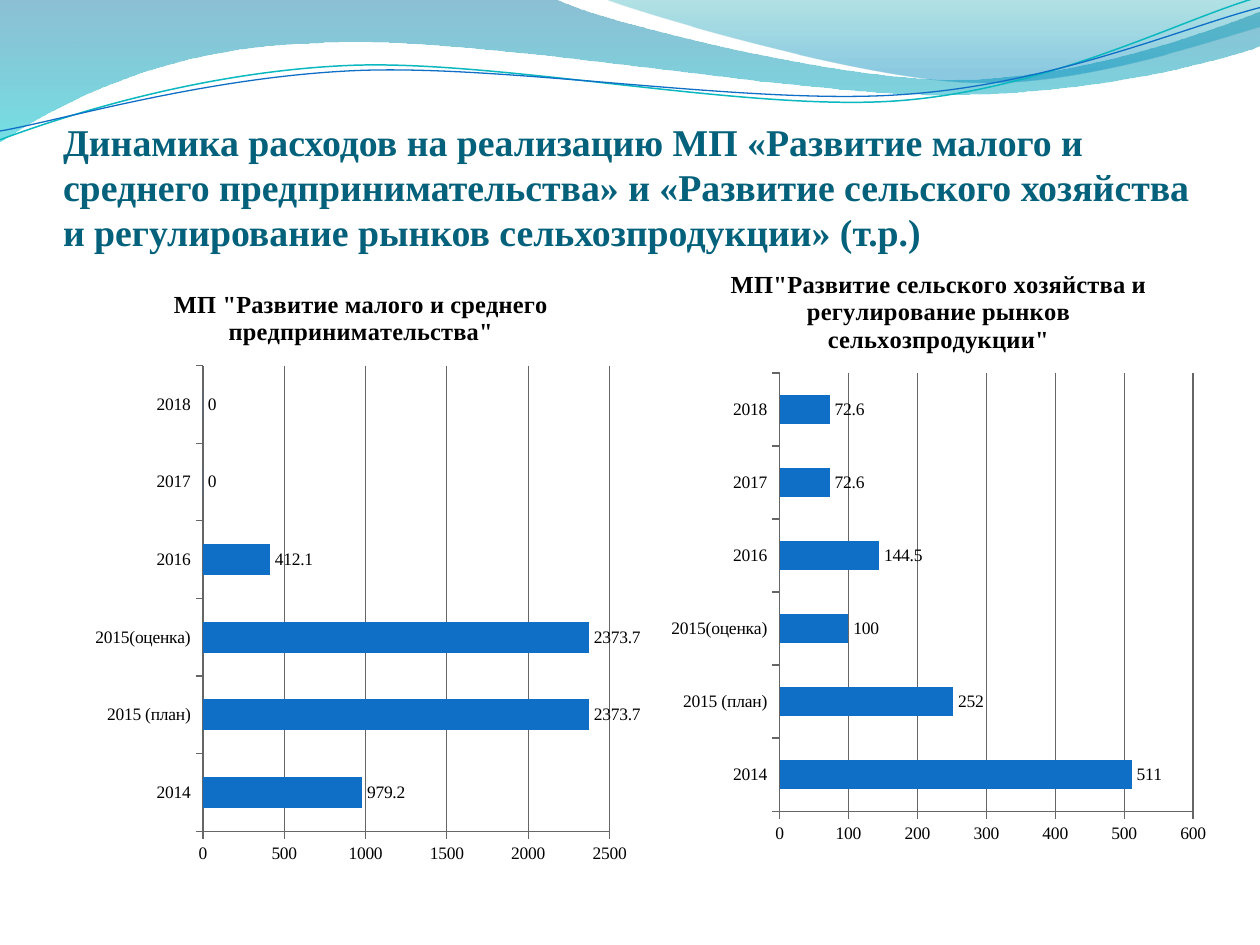
from math import cos, radians, sin

from lxml import etree
from pptx import Presentation
from pptx.chart.data import CategoryChartData
from pptx.dml.color import RGBColor
from pptx.enum.chart import XL_CHART_TYPE, XL_LABEL_POSITION, XL_TICK_MARK
from pptx.enum.text import MSO_ANCHOR, MSO_AUTO_SIZE, PP_ALIGN
from pptx.oxml.ns import qn
from pptx.util import Inches, Pt

FONT = "Times New Roman"
TITLE_COLOR = RGBColor(0x04, 0x61, 0x7B)
BLUE = RGBColor(0x0F, 0x6F, 0xC6)
TURQUOISE = RGBColor(0x0A, 0xB8, 0xBF)
GRID_GRAY = RGBColor(0x66, 0x66, 0x66)
BLACK = RGBColor(0, 0, 0)
LINE_TILT = -2.7

TITLE = ("Динамика расходов на реализацию МП «Развитие малого и среднего "
         "предпринимательства» и «Развитие сельского хозяйства и "
         "регулирование рынков сельхозпродукции» (т.р.)")
YEARS = ("2014", "2015 (план)", "2015(оценка)", "2016", "2017", "2018")

# A wave has a box and segments: one point is a corner, three a Bezier curve.
# Fill stops are (position, colour, opacity in percent).
FILLED_WAVES = (
    ((-0.01, -0.01, 10.02, 1.14),
     [[(0, 0)], [(4.4, -0.01)],
      [(4.76, 0.17), (6.64, 0.63), (7.58, 0.63)],
      [(8.53, 0.63), (9.58, 0.26), (10, 0.09)], [(10.01, 0.36)],
      [(9.83, 0.44), (8.7, 0.76), (7.46, 0.75)],
      [(6.22, 0.75), (3.82, 0.28), (2.57, 0.34)],
      [(1.29, 0.36), (0.46, 0.83), (-0.01, 1.13)], [(0, 0)]],
     ((0, RGBColor(0x00, 0x74, 0xA1), 45), (1, RGBColor(0x00, 0xC6, 0xCF), 55))),
    ((4.79, -0.01, 5.21, 0.7),
     [[(4.79, -0.01)],
      [(5.09, 0.11), (6.82, 0.62), (7.69, 0.65)],
      [(8.56, 0.69), (9.61, 0.32), (10, 0.21)], [(10, 0)], [(4.79, -0.01)]],
     ((0, RGBColor(0x00, 0xA1, 0xA9), 30), (0.8, RGBColor(0x00, 0x8B, 0xBF), 45))),
)
LINE_WAVES = (
    ((-0.02, 0.22, 10.02, 0.71),
     [[(0, 1.11)],
      [(0.48, 0.93), (1.58, 0.57), (2.77, 0.52)],
      [(3.95, 0.47), (5.93, 0.89), (7.13, 0.8)],
      [(8.33, 0.71), (9.38, 0.15), (9.98, -0.02)]], TURQUOISE, 0.85),
    ((-0.02, 0.3, 10.03, 0.58),
     [[(0, 1.04)],
      [(0.47, 0.96), (1.64, 0.61), (2.83, 0.56)],
      [(4.03, 0.51), (5.97, 0.84), (7.17, 0.75)],
      [(8.36, 0.67), (9.41, 0.21), (10, 0.06)]], BLUE, 0.75),
)


def add_wave(slide, box, segments, closed, tilt=0):
    """Draw the segments in a box turned by tilt degrees about its centre."""
    left, top, width, height = box
    cosine, sine = cos(radians(tilt)), sin(radians(tilt))

    def to_box(point):
        x, y = point[0] - left - width / 2, point[1] - top - height / 2
        return (Inches(x * cosine + y * sine + width / 2),
                Inches(y * cosine - x * sine + height / 2))

    corners = [to_box(segment[-1]) for segment in segments]
    builder = slide.shapes.build_freeform(*corners[0])
    builder.add_line_segments(corners[1:], close=closed)
    shape = builder.convert_to_shape()
    shape.left, shape.top, shape.width, shape.height = map(Inches, box)
    shape.rotation = tilt
    shape.shadow.inherit = False

    outline = next(shape.element.iter(qn("a:path")))
    outline.set("w", str(Inches(width)))
    outline.set("h", str(Inches(height)))
    for command, segment in zip(list(outline), segments):
        if len(segment) == 3:
            command_name = "a:cubicBezTo"
        else:
            command_name = "a:lnTo" if segment is not segments[0] else "a:moveTo"
        replacement = etree.Element(qn(command_name))
        for x, y in map(to_box, segment):
            etree.SubElement(replacement, qn("a:pt"), x=str(x), y=str(y))
        outline.replace(command, replacement)
    return shape


def add_wave_header(slide):
    for box, segments, stops in FILLED_WAVES:
        shape = add_wave(slide, box, segments, closed=True)
        shape.line.fill.background()
        shape.fill.gradient()
        shape.fill.gradient_angle = 270
        for stop, (position, color, _) in zip(shape.fill.gradient_stops, stops):
            stop.position = position
            stop.color.rgb = color
        color_elements = list(shape.element.spPr.iter(qn("a:srgbClr")))
        for element, (_, _, opacity) in zip(color_elements, stops):
            etree.SubElement(element, qn("a:alpha"), val=str(opacity * 1000))
    for box, segments, color, line_width in LINE_WAVES:
        shape = add_wave(slide, box, segments, closed=False, tilt=LINE_TILT)
        shape.fill.background()
        shape.line.color.rgb = color
        shape.line.width = Pt(line_width)


def style_font(font, size, color, bold=False):
    font.name = FONT
    font.size = Pt(size)
    font.bold = bold
    font.color.rgb = color


def set_title(slide, left, top, width, height):
    title = slide.shapes.title
    title.left, title.top, title.width, title.height = left, top, width, height
    frame = title.text_frame
    frame.word_wrap = True
    frame.auto_size = MSO_AUTO_SIZE.NONE
    frame.vertical_anchor = MSO_ANCHOR.BOTTOM
    frame.margin_left = frame.margin_right = frame.margin_bottom = 0
    frame.margin_top = Inches(0.05)
    paragraph = frame.paragraphs[0]
    paragraph.alignment = PP_ALIGN.LEFT
    run = paragraph.add_run()
    run.text = TITLE
    style_font(run.font, 21.6, TITLE_COLOR, bold=True)


def add_expense_chart(slide, name, values, left, top, width, height):
    data = CategoryChartData()
    data.categories = YEARS
    data.add_series(name, values)
    chart = slide.shapes.add_chart(
        XL_CHART_TYPE.BAR_CLUSTERED, left, top, width, height, data).chart
    style_font(chart.font, 10, BLACK)
    chart.has_legend = False
    chart.has_title = True
    run = chart.chart_title.text_frame.paragraphs[0].add_run()
    run.text = name
    style_font(run.font, 14, BLACK, bold=True)
    chart.chart_title.include_in_layout = False

    for axis in (chart.category_axis, chart.value_axis):
        axis.major_tick_mark = XL_TICK_MARK.OUTSIDE
        axis.minor_tick_mark = XL_TICK_MARK.NONE
        axis.format.line.color.rgb = GRID_GRAY
        style_font(axis.tick_labels.font, 10, BLACK)
    chart.category_axis.has_major_gridlines = False
    chart.value_axis.has_major_gridlines = True
    chart.value_axis.major_gridlines.format.line.color.rgb = GRID_GRAY

    plot = chart.plots[0]
    plot.gap_width = 150
    plot.vary_by_categories = False
    series = plot.series[0]
    series.format.fill.solid()
    series.format.fill.fore_color.rgb = BLUE
    labels = series.data_labels
    labels.show_value = True
    labels.position = XL_LABEL_POSITION.OUTSIDE_END
    style_font(labels.font, 10, BLACK)


def main():
    presentation = Presentation()
    presentation.slide_width = Inches(10)
    presentation.slide_height = Inches(7.5)
    slide = presentation.slides.add_slide(presentation.slide_layouts[5])
    add_wave_header(slide)
    set_title(slide, Inches(0.5), Inches(0.77), Inches(9), Inches(1.25))
    chart_size = Inches(4.42), Inches(4.85)
    add_expense_chart(
        slide, 'МП "Развитие малого и среднего предпринимательства"',
        (979.2, 2373.7, 2373.7, 412.1, 0, 0),
        Inches(0.67), Inches(2.1), *chart_size)
    add_expense_chart(
        slide, 'МП"Развитие сельского хозяйства и регулирование рынков сельхозпродукции"',
        (511, 252, 100, 144.5, 72.6, 72.6),
        Inches(5.24), Inches(1.94), *chart_size)
    presentation.save("out.pptx")


if __name__ == "__main__":
    main()
